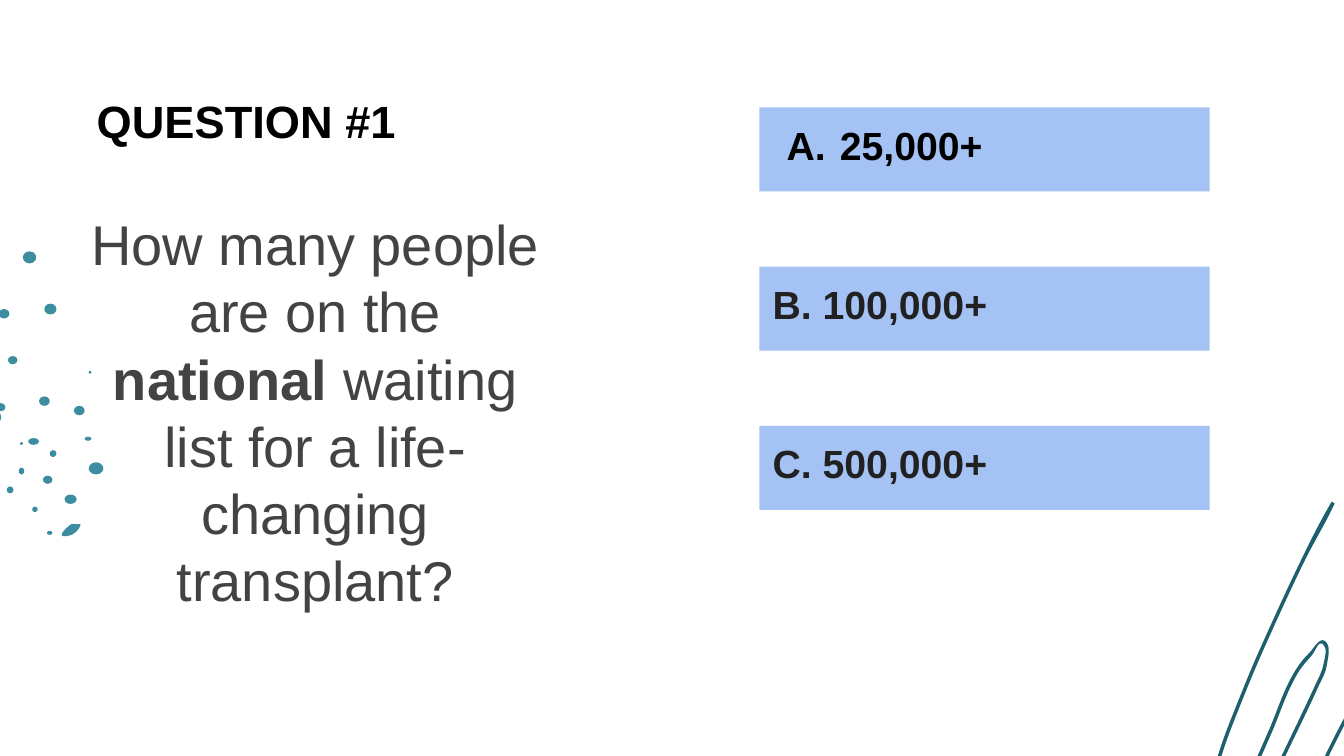
from math import hypot

from lxml.etree import SubElement
from pptx import Presentation
from pptx.dml.color import RGBColor
from pptx.enum.shapes import MSO_SHAPE as Shape
from pptx.enum.text import MSO_ANCHOR as Anchor, MSO_AUTO_SIZE as AutoSize, PP_ALIGN as Align
from pptx.oxml.ns import qn
from pptx.util import Pt

TEAL = RGBColor(0x3C, 0x8D, 0xA0)
DARK_TEAL = RGBColor(0x1C, 0x5F, 0x6F)
LIGHT_BLUE = RGBColor(0xA4, 0xC2, 0xF4)
BLACK = RGBColor(0, 0, 0)
INK = RGBColor(0x21, 0x21, 0x21)
GRAY = RGBColor(0x43, 0x43, 0x43)
FONT = "Arial"

# Decorations are drawn on a grid of hundredths of an inch
UNIT = Pt(0.72)

# Left, top, width, height of each dot
DOTS = [
    (-12, 305, 13, 11), (15, 329, 2, 2), (14, 348, 4, 5), (24, 377, 4, 4),
    (35, 395, 4, 3), (48, 368, 9, 7), (32, 354, 7, 6), (5, 362, 5, 5),
    (37, 335, 5, 5), (21, 326, 8, 5), (29, 295, 8, 7), (-3, 300, 7, 6),
    (6, 265, 7, 6), (-1, 230, 8, 7), (66, 276, 2, 2), (55, 302, 8, 7),
    (63, 325, 5, 3), (66, 344, 11, 9), (33, 226, 9, 8), (17, 187, 10, 9),
]
DROPLET = [(56, 390), (53, 390), (46, 397), (47, 399), (55, 397), (60, 390)]

# Points along the middle of the scribbled stroke
SCRIBBLE = [
    (992, 374), (969, 418), (938.5, 484), (923, 521), (909, 558),
    (906, 573), (910, 585), (919, 587), (928, 580), (944.5, 546),
    (957.5, 514), (966, 498), (975, 487), (985, 478), (986, 495), (980, 510),
    (963, 546), (945, 583), (936, 601), (930, 616), (929, 628), (933, 637),
    (943, 638), (954, 632), (973, 594), (991, 555), (1011, 518),
    (1028, 494), (1039, 488), (1042, 501), (1038, 525), (1026, 553),
    (1009, 582), (990, 618), (973, 654), (972, 667), (977, 670), (984, 667),
    (998, 655), (1015, 620), (1031, 582), (1049, 547), (1060, 529),
    (1072, 519), (1082, 520), (1084, 530), (1078, 557), (1059, 598),
    (1020, 660), (1011, 676), (1008, 688), (1013, 695),
    (1023, 698), (1034, 693), (1043, 684), (1053, 665), (1101, 565),
]
HALF_WIDTH = 1.3


def paint(shape, color):
    shape.shadow.inherit = False
    shape.fill.solid()
    shape.fill.fore_color.rgb = color
    shape.line.fill.background()


def style_text(paragraph, size, color, bold=False):
    for run in paragraph.runs:
        run.font.name = FONT
        run.font.size = Pt(size)
        run.font.color.rgb = color
        run.font.bold = bold


def set_insets(text_frame):
    text_frame.word_wrap = True
    text_frame.margin_left = text_frame.margin_right = Pt(7.2)
    text_frame.margin_top = text_frame.margin_bottom = Pt(7.2)


def directions(points, before, after):
    """Unit vector of travel at each point."""
    ends = [before, *points, after]
    vectors = [(c[0] - a[0], c[1] - a[1]) for a, c in zip(ends, ends[2:])]
    return [(x / hypot(x, y), y / hypot(x, y)) for x, y in vectors]


def smooth(shape):
    """Turn the straight segments of a closed freeform into curves."""
    spots = [(int(point.get("x")), int(point.get("y")))
             for point in shape._element.iter(qn("a:pt"))]
    headings = directions(spots, spots[-1], spots[0])
    segments = list(shape._element.iter(qn("a:lnTo")))
    for index, segment in enumerate(segments):
        (x1, y1), (x2, y2) = spots[index:index + 2]
        (u1, v1), (u2, v2) = headings[index:index + 2]
        reach = hypot(x2 - x1, y2 - y1) / 3
        curve = segment.makeelement(qn("a:cubicBezTo"))
        for x, y in ((x1 + u1 * reach, y1 + v1 * reach),
                     (x2 - u2 * reach, y2 - v2 * reach), (x2, y2)):
            point = SubElement(curve, qn("a:pt"))
            point.set("x", str(round(x)))
            point.set("y", str(round(y)))
        segment.getparent().replace(segment, curve)


def add_outline(shapes, points, color):
    corners = [(round(x * UNIT), round(y * UNIT)) for x, y in points]
    builder = shapes.build_freeform(*corners[0])
    builder.add_line_segments(corners[1:], close=True)
    shape = builder.convert_to_shape()
    smooth(shape)
    paint(shape, color)


def ribbon(points):
    """Outline of a stroke of even width along the points."""
    pairs = list(zip(points, directions(points, points[0], points[-1])))
    right, left = [[(x - v * side, y + u * side) for (x, y), (u, v) in pairs]
                   for side in (HALF_WIDTH, -HALF_WIDTH)]
    return right + left[::-1]


def add_decoration(slide):
    # Dots at the left edge
    dots = slide.shapes.add_group_shape().shapes
    add_outline(dots, DROPLET, TEAL)
    for box in DOTS:
        paint(dots.add_shape(Shape.OVAL, *[UNIT * value for value in box]), TEAL)
    # Scribble in the lower right corner
    add_outline(slide.shapes, ribbon(SCRIBBLE), DARK_TEAL)


def add_question(slide, left, top, width, height):
    # Heading
    title = slide.shapes.title
    title.left, title.top = left + Pt(5), top
    title.width, title.height = Pt(642), Pt(45.4)
    text_frame = title.text_frame
    text_frame.text = "QUESTION #1"
    set_insets(text_frame)
    text_frame.vertical_anchor = Anchor.MIDDLE
    paragraph = text_frame.paragraphs[0]
    paragraph.alignment = Align.LEFT
    paragraph.line_spacing = 1.0
    style_text(paragraph, 24.2, BLACK, bold=True)

    # Question text
    offset = Pt(63.4)
    body = slide.shapes.add_textbox(left, top + offset, width, height - offset)
    set_insets(body.text_frame)
    paragraph = body.text_frame.paragraphs[0]
    paragraph.alignment = Align.CENTER
    for text in ("How many people are on the ", "national ",
                 "waiting list for a life-changing transplant?"):
        paragraph.add_run().text = text
    style_text(paragraph, 30, GRAY)
    paragraph.runs[1].font.bold = True


def add_letter_bullet(paragraph, color):
    properties = paragraph._p.get_or_add_pPr()
    properties.set("marL", str(Pt(36)))
    properties.set("indent", str(-Pt(28.5)))
    bullet_color = SubElement(properties, qn("a:buClr"))
    SubElement(bullet_color, qn("a:srgbClr")).set("val", str(color))
    SubElement(properties, qn("a:buFont")).set("typeface", FONT)
    SubElement(properties, qn("a:buAutoNum")).set("type", "alphaUcPeriod")


def add_answer(slide, left, top, width, height, text, color, lettered):
    shapes = slide.shapes.add_group_shape().shapes
    paint(shapes.add_shape(Shape.RECTANGLE, left, top, width, height), LIGHT_BLUE)
    label = shapes.add_textbox(left, top, width, Pt(37.5))
    set_insets(label.text_frame)
    label.text_frame.auto_size = AutoSize.SHAPE_TO_FIT_TEXT
    label.text_frame.text = text
    paragraph = label.text_frame.paragraphs[0]
    if lettered:
        add_letter_bullet(paragraph, color)
    style_text(paragraph, 21, color, bold=True)


def main():
    presentation = Presentation()
    presentation.slide_width, presentation.slide_height = Pt(720), Pt(405)
    slide = presentation.slides.add_slide(presentation.slide_layouts[5])

    add_decoration(slide)
    add_question(slide, Pt(39.6), Pt(41.8), Pt(258.5), Pt(339.8))
    answers = [("25,000+", BLACK, True), ("B. 100,000+", INK, False),
               ("C. 500,000+", INK, False)]
    for row, answer in enumerate(answers):
        add_answer(slide, Pt(406.8), Pt(57.6 + 85.3 * row), Pt(241.2), Pt(45), *answer)

    presentation.save("out.pptx")


if __name__ == "__main__":
    main()
